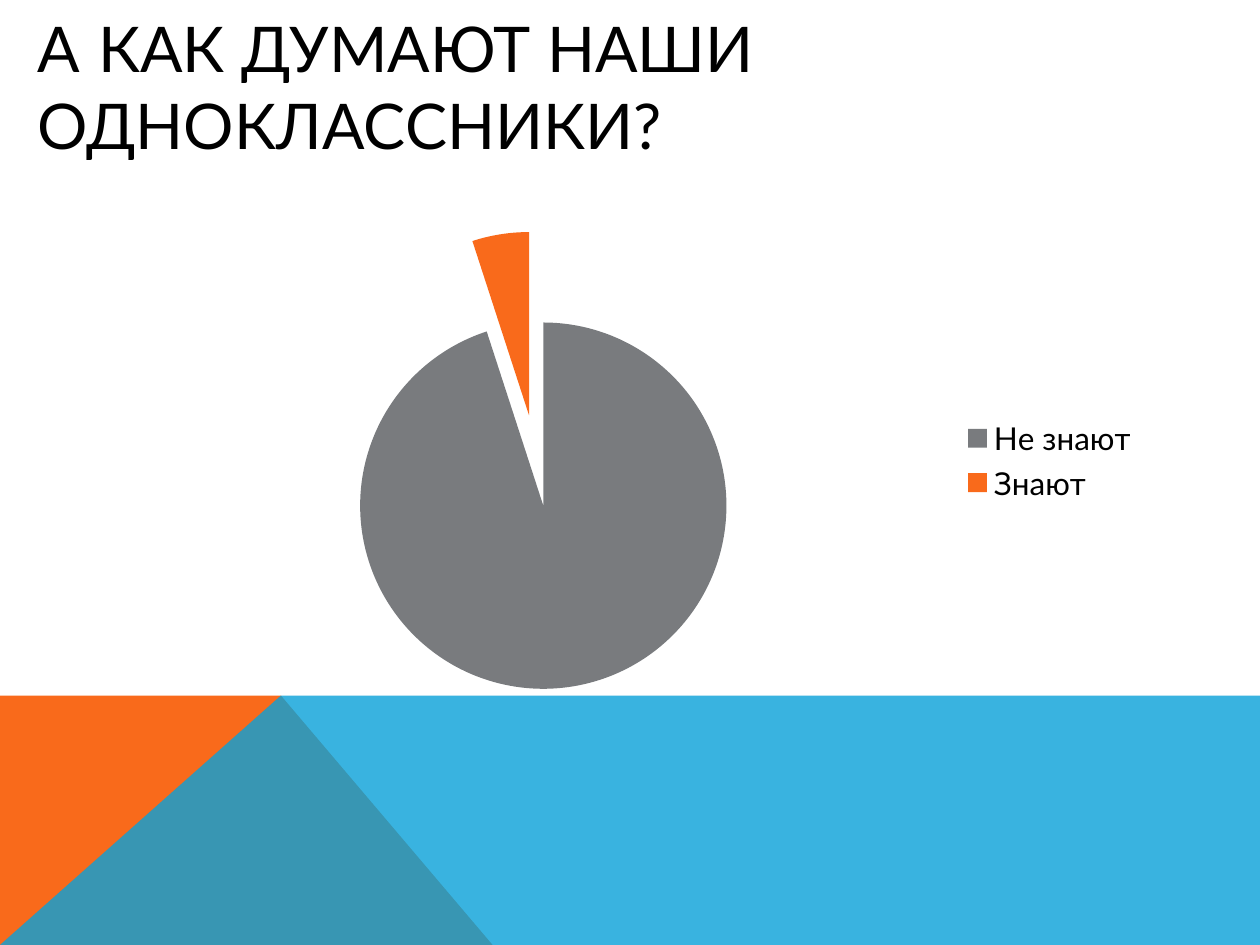
"""Build a slide with a two-slice survey pie above a coloured footer band."""
from dataclasses import dataclass

from pptx import Presentation
from pptx.chart.data import CategoryChartData
from pptx.dml.color import RGBColor
from pptx.enum.chart import XL_CHART_TYPE as ChartType, XL_LEGEND_POSITION as LegendPosition
from pptx.enum.text import MSO_ANCHOR as Anchor, PP_ALIGN as Align
from pptx.oxml import parse_xml
from pptx.oxml.ns import nsdecls, qn
from pptx.util import Inches, Pt

FONT = "Lato"
BLACK, ORANGE, BLUE, GREY = "000000", "F96A1B", "08A1D9", "797B7E"
WIDTH, HEIGHT = 10, 7.5
BAND_TOP, PEAK = 5.52, 2.23


@dataclass(frozen=True)
class Panel:
    points: tuple
    color: str
    opacity: int = 100


@dataclass(frozen=True)
class Slice:
    label: str
    value: int
    color: str


PANELS = (
    Panel(((0, HEIGHT), (0, BAND_TOP), (PEAK, BAND_TOP), (3.91, HEIGHT)), ORANGE),
    Panel(((0, HEIGHT), (PEAK, BAND_TOP), (WIDTH, BAND_TOP), (WIDTH, HEIGHT)), BLUE, 80),
)
SLICES = (Slice("Не знают", 95, GREY), Slice("Знают", 5, ORANGE))


def paint(fill, color: str) -> None:
    """Give a fill one solid colour."""
    fill.solid()
    fill.fore_color.rgb = RGBColor.from_string(color)


def style_font(font, size: float, color: str = BLACK) -> None:
    """Set the face, size and colour of a font."""
    font.name = FONT
    font.size = Pt(size)
    font.bold = False
    font.color.rgb = RGBColor.from_string(color)


def add_span(para, text: str, *, size: float, color: str = BLACK) -> None:
    """Append formatted text to a paragraph."""
    span = para.add_run()
    span.text = text
    style_font(span.font, size, color)


def add_panel(page, panel: Panel) -> None:
    """Draw one polygon of the footer band."""
    start, *rest = [(Inches(x), Inches(y)) for x, y in panel.points]
    builder = page.shapes.build_freeform(*start)
    builder.add_line_segments(rest, close=True)
    shape = builder.convert_to_shape()
    shape.shadow.inherit = False
    shape.line.fill.background()
    paint(shape.fill, panel.color)
    if panel.opacity < 100:
        color = shape.fill._xPr.find(qn("a:solidFill"))[0]
        color.append(parse_xml(f'<a:alpha {nsdecls("a")} val="{panel.opacity * 1000}"/>'))


def format_title(page) -> None:
    """Place and fill the title placeholder."""
    title = page.shapes.title
    title.left, title.top = Inches(0.2), Inches(0)
    title.width, title.height = Inches(10.79), Inches(1.3)
    frame = title.text_frame
    frame.word_wrap = True
    frame.vertical_anchor = Anchor.MIDDLE
    para = frame.paragraphs[0]
    para.alignment = Align.LEFT
    para.line_spacing = 1.0
    para.space_before = Pt(0)
    add_span(para, "А", size=36)
    add_span(para, " ", size=40)
    add_span(para, "КАК ДУМАЮТ НАШИ ОДНОКЛАССНИКИ?", size=36)


def add_pie(page, slices: tuple, explosion: int) -> None:
    """Add the exploded pie chart with its legend."""
    data = CategoryChartData()
    data.categories = [part.label for part in slices]
    data.add_series("Series 1", [part.value for part in slices])
    chart = page.shapes.add_chart(
        ChartType.PIE, Inches(0.91), Inches(1.7), Inches(8.23), Inches(3.91), data
    ).chart
    style_font(chart.font, 18)
    chart.has_title = False
    chart.has_legend = True
    chart.legend.position = LegendPosition.RIGHT
    chart.legend.include_in_layout = False
    plot = chart.plots[0]
    plot.vary_by_categories = True
    series = plot.series[0]
    for index, part in enumerate(slices):
        point = series.points[index].format
        paint(point.fill, part.color)
        point.line.fill.background()
    series._element.find(qn("c:dPt")).addprevious(
        parse_xml(f'<c:explosion {nsdecls("c")} val="{explosion}"/>')
    )


def main() -> None:
    """Build and save the deck."""
    deck = Presentation()
    deck.slide_width, deck.slide_height = Inches(WIDTH), Inches(HEIGHT)
    page = deck.slides.add_slide(deck.slide_layouts[5])
    paint(page.background.fill, "FFFFFF")
    for panel in PANELS:
        add_panel(page, panel)
    format_title(page)
    add_pie(page, SLICES, explosion=25)
    deck.save("out.pptx")


if __name__ == "__main__":
    main()
